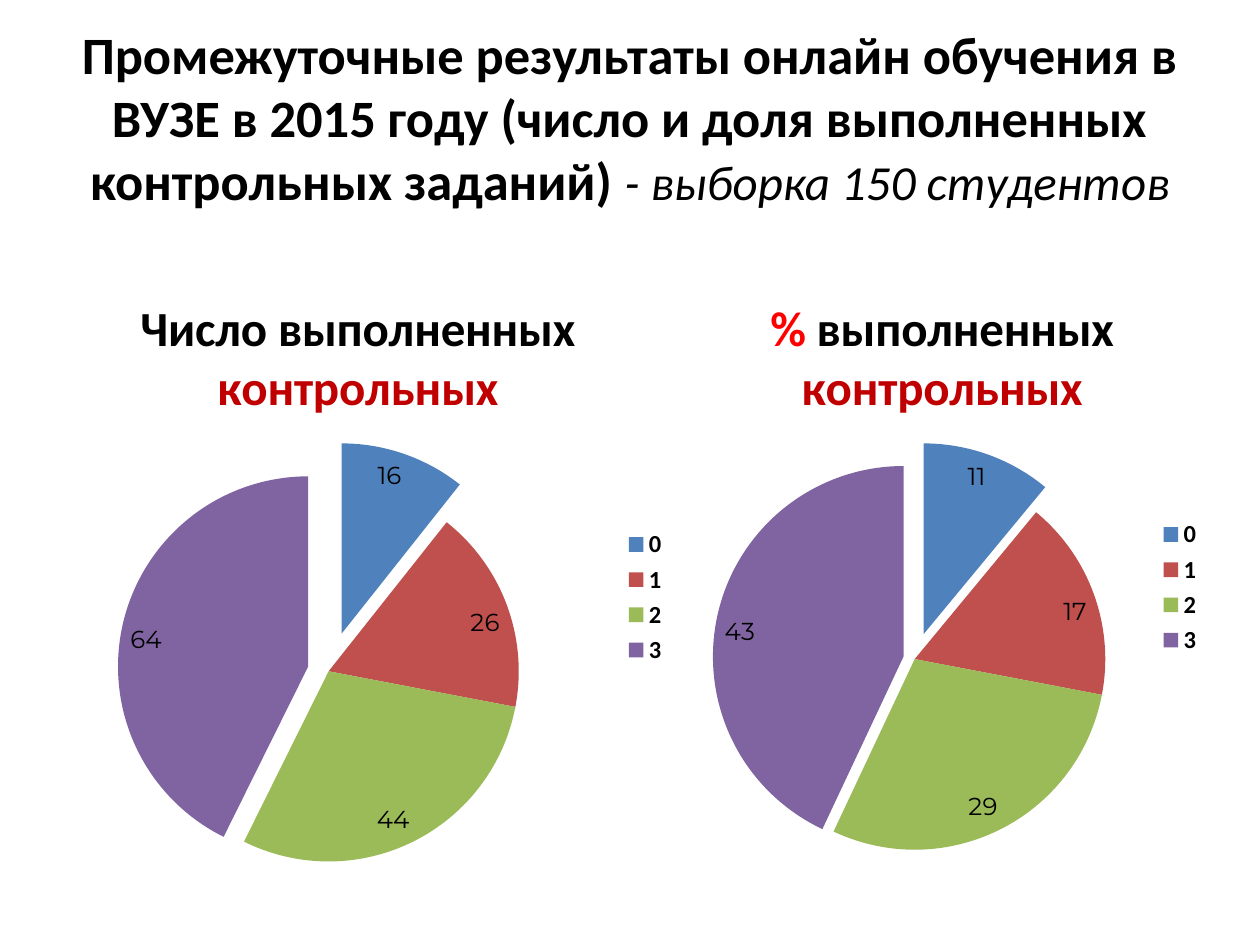
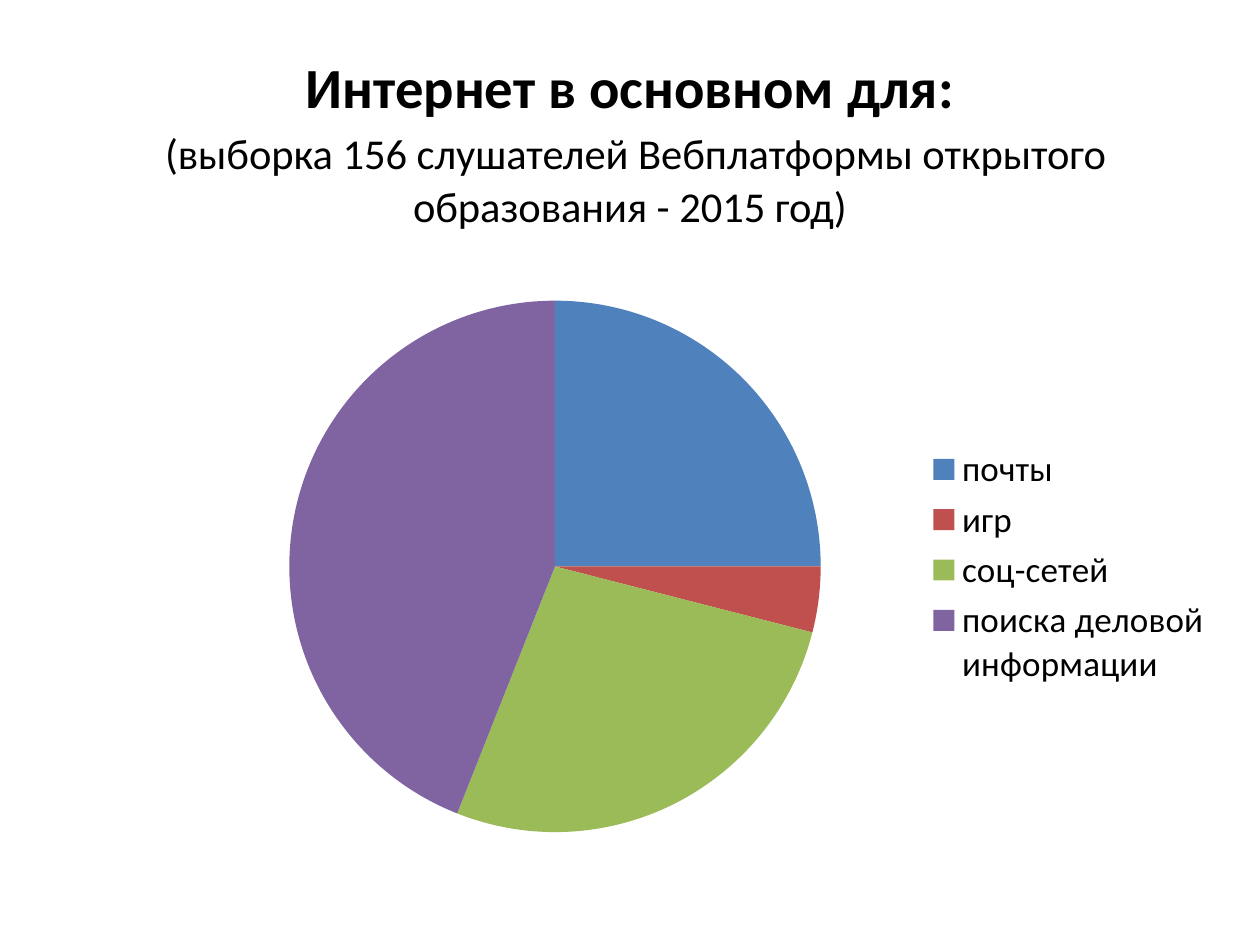
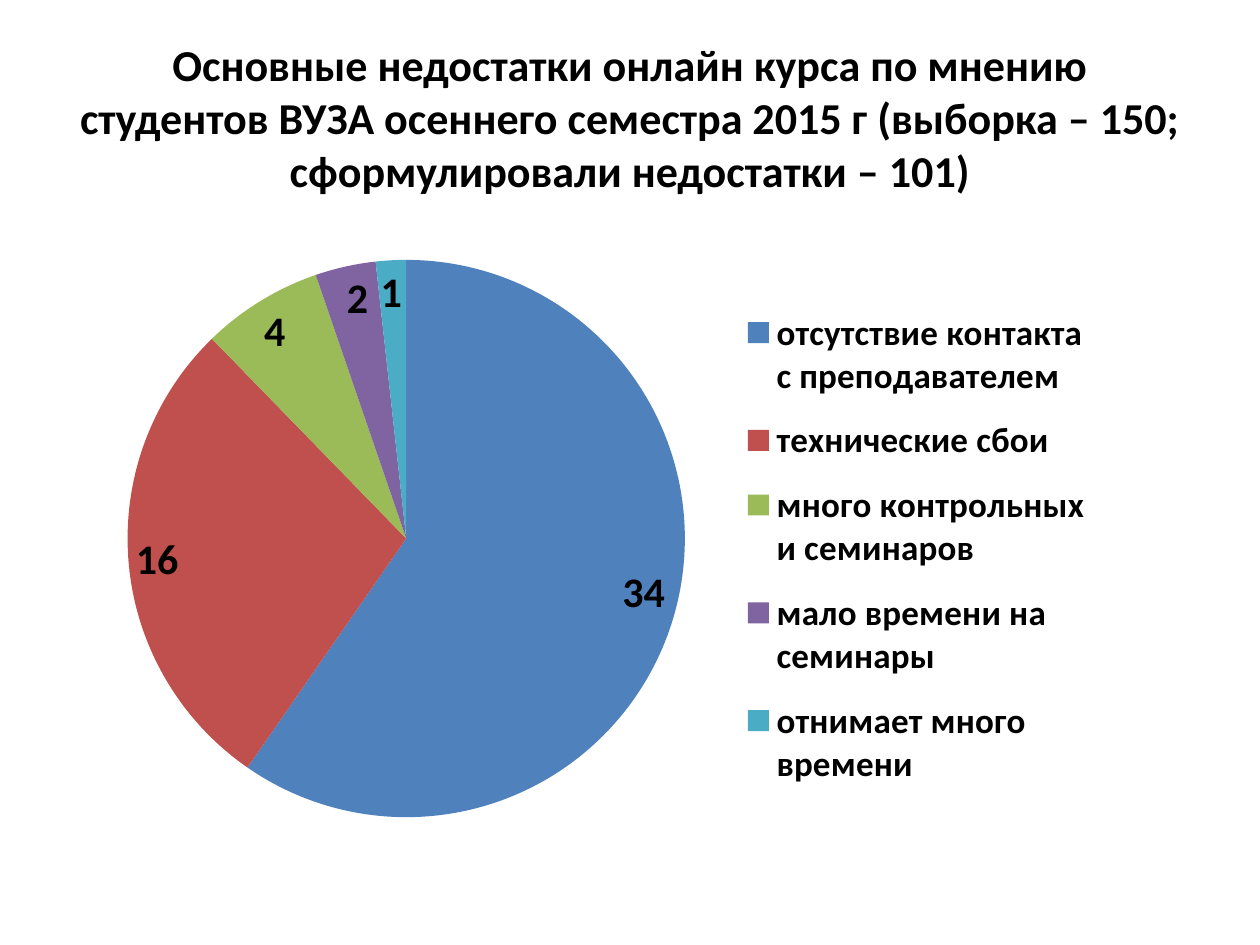
from lxml import etree
from pptx import Presentation
from pptx import util as u
from pptx.chart import data as cd
from pptx.dml.color import RGBColor
from pptx.enum import chart as ch
from pptx.enum import text
from pptx.oxml import ns

BLACK = RGBColor(0x00, 0x00, 0x00)
RED = RGBColor(0xFF, 0x00, 0x00)
DARK_RED = RGBColor(0xC0, 0x00, 0x00)
SLICES = [
    RGBColor(0x4F, 0x81, 0xBD),
    RGBColor(0xC0, 0x50, 0x4D),
    RGBColor(0x9B, 0xBB, 0x59),
    RGBColor(0x80, 0x64, 0xA2),
    RGBColor(0x4B, 0xAC, 0xC6),
]
FONT = "Calibri"
LABEL_FONT = "Montserrat"
TASK_COUNTS = ["0", "1", "2", "3"]


def set_font(font, size, color=BLACK, **values):
    font.color.rgb = color
    for key, value in {"size": u.Pt(size), "name": FONT, **values}.items():
        setattr(font, key, value)


def add_runs(p, runs):
    for words, size, values in runs:
        r = p.add_run()
        r.text = words
        set_font(r.font, size, **values)


def add_title(s, lines, height=3.18):
    sp = s.shapes.add_textbox(u.Cm(1.27), u.Cm(0.76), u.Cm(22.86), u.Cm(height))
    tf = sp.text_frame
    tf.word_wrap = True
    tf.vertical_anchor = text.MSO_ANCHOR.MIDDLE
    p = tf.paragraphs[0]
    p.alignment = text.PP_ALIGN.CENTER
    for i, runs in enumerate(lines):
        if i:
            p.add_line_break()
        add_runs(p, runs)


def sub(parent, tag, value):
    etree.SubElement(parent, ns.qn(tag)).set("val", str(value))


def make_layout(owner, area, inner=False):
    for old in owner.findall(ns.qn("c:layout")):
        owner.remove(old)
    layout = etree.Element(ns.qn("c:layout"))
    manual = etree.SubElement(layout, ns.qn("c:manualLayout"))
    if inner:
        sub(manual, "c:layoutTarget", "inner")
    sub(manual, "c:xMode", "edge")
    sub(manual, "c:yMode", "edge")
    for key, value in zip("xywh", area):
        sub(manual, "c:" + key, value)
    return layout


def add_legend(chart, size, bold, area):
    chart.has_legend = True
    legend = chart.legend
    legend.position = ch.XL_LEGEND_POSITION.RIGHT
    legend.include_in_layout = False
    set_font(legend.font, size, bold=bold)
    if area:
        owner = chart.element.xpath(".//c:legend")[0]
        layout = make_layout(owner, area)
        owner.find(ns.qn("c:legendPos")).addnext(layout)


def color_slices(chart, count, explosions):
    series = chart.plots[0].series[0]
    for i in range(count):
        fill = series.points[i].format.fill
        fill.solid()
        fill.fore_color.rgb = SLICES[i]
    for i, percent in explosions.items():
        props = chart.element.xpath(f".//c:dPt[c:idx/@val='{i}']/c:spPr")[0]
        explosion = etree.Element(ns.qn("c:explosion"))
        explosion.set("val", str(percent))
        props.addprevious(explosion)


def add_pie(s, box, name, cats, values, plot_area, legend, heading=None,
            labels=None, explosions=None, legend_area=None):
    data = cd.CategoryChartData()
    data.categories = cats
    data.add_series(name, values)
    chart = s.shapes.add_chart(ch.XL_CHART_TYPE.PIE, *map(u.Cm, box), data).chart
    set_font(chart.font, 10)
    chart.has_title = bool(heading)
    if heading:
        add_runs(chart.chart_title.text_frame.paragraphs[0], heading)
    plot = chart.plots[0]
    plot.vary_by_categories = True
    color_slices(chart, len(cats), explosions or {})
    if labels:
        plot.has_data_labels = True
        dl = plot.data_labels
        set_font(dl.font, **labels)
        for key, value in {
            "show_value": True,
            "show_percentage": False,
            "number_format": "0",
            "number_format_is_linked": False,
            "position": ch.XL_LABEL_POSITION.INSIDE_END,
        }.items():
            setattr(dl, key, value)
    add_legend(chart, *legend, legend_area)
    owner = chart.element.xpath(".//c:plotArea")[0]
    owner.insert(0, make_layout(owner, plot_area, inner=True))


def results_slide(s):
    add_title(s, [[
        ("Промежуточные результаты онлайн обучения в ВУЗЕ в 2015 году "
         "(число и доля выполненных контрольных заданий) ", 30, {"bold": True}),
        ("- выборка 150 студентов", 28, {"bold": False, "italic": True}),
    ]])
    pies = [
        ((13.49, 5.54, 11, 12.6), "%", RED, [11, 17, 29, 43],
         (0.1, 0.31, 0.7, 0.61), {0: 14, 3: 6}),
        ((0.71, 5.54, 13, 13), "Число", BLACK, [16, 26, 44, 64],
         (0.16, 0.32, 0.59, 0.59), {0: 21, 3: 11}),
    ]
    for box, measure, color, values, plot_area, explosions in pies:
        heading = [
            (measure, 28, {"bold": True, "color": color}),
            (" выполненных ", 28, {"bold": True}),
            ("контрольных", 28, {"bold": True, "color": DARK_RED}),
        ]
        add_pie(s, box, f"{measure} выполненных контрольных", TASK_COUNTS, values,
                plot_area, (14, True), heading,
                {"size": 14, "name": LABEL_FONT, "bold": False}, explosions)


def internet_slide(s):
    add_title(s, [
        [("Интернет в основном для:", 32.4, {"bold": True})],
        [(" ", 28.8, {"bold": False}),
         ("(выборка 156 слушателей Вебплатформы открытого образования - 2015 год)",
          24.3, {"bold": False})],
    ], 4.17)
    add_pie(s, (3.91, 5.72, 20.8, 11.4), "Цели",
            ["почты", "игр", "соц-сетей", "поиска деловой информации"],
            [25, 4, 27, 44], (0.09, 0.03, 0.52, 0.94), (20, False))


def drawbacks_slide(s):
    add_title(s, [[
        ("Основные недостатки онлайн курса по мнению студентов ВУЗА осеннего "
         "семестра 2015 г (выборка – 150; сформулировали недостатки – 101)",
         25.2, {"bold": True}),
    ]])
    add_pie(s, (1.3, 3.73, 21.2, 13.2), "Недостатки",
            ["отсутствие контакта с преподавателем", "технические сбои",
             "много контрольных и семинаров", "мало времени на семинары",
             "отнимает много времени"],
            [34, 16, 4, 2, 1], (0.06, 0.11, 0.53, 0.86), (20, True),
            labels={"size": 24, "bold": True},
            legend_area=(0.64, 0.16, 0.34, 0.79))


def main():
    prs = Presentation()
    prs.slide_width, prs.slide_height = u.Cm(25.4), u.Cm(19.05)
    for build in (results_slide, internet_slide, drawbacks_slide):
        build(prs.slides.add_slide(prs.slide_layouts[6]))
    prs.save("out.pptx")


if __name__ == "__main__":
    main()
